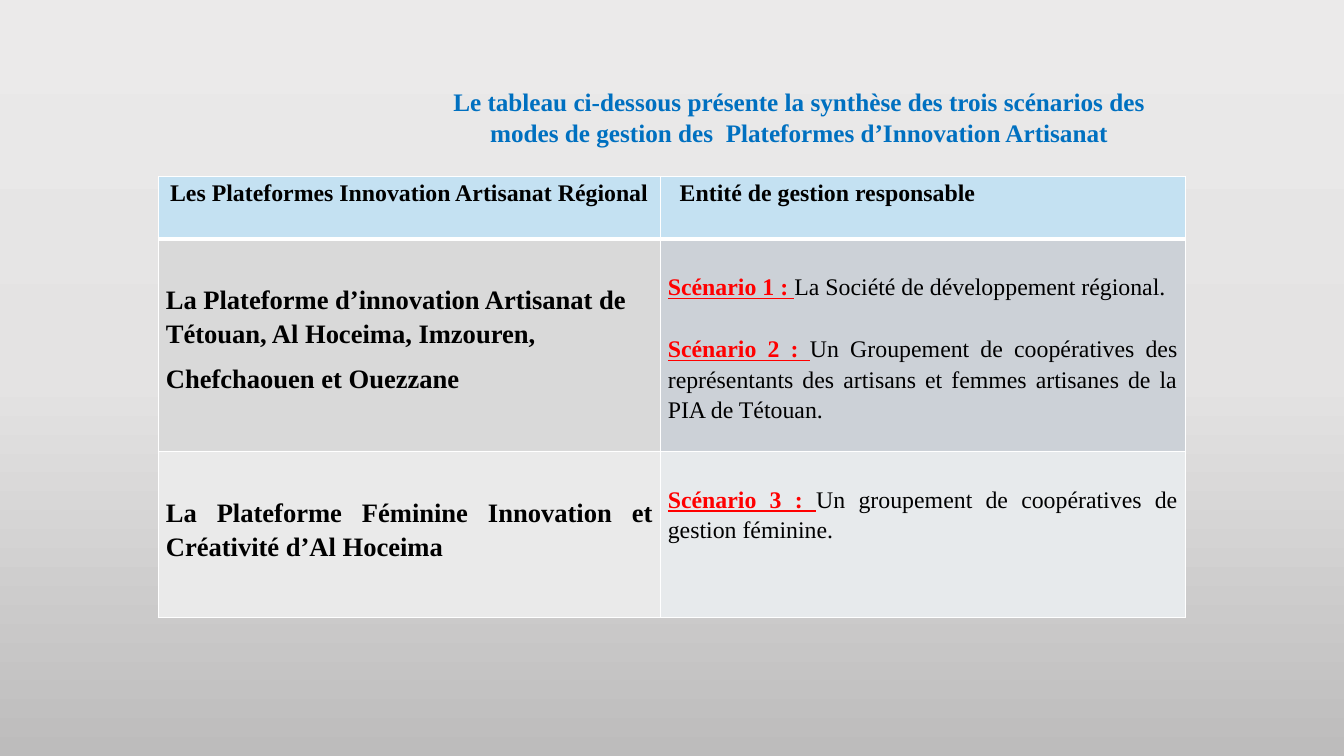
import copy
from dataclasses import dataclass

import pptx
import pptx.dml.color
import pptx.enum.dml
import pptx.enum.text
import pptx.oxml
import pptx.oxml.ns
import pptx.slide
import pptx.table
import pptx.text.text
import pptx.util

Cm = pptx.util.Cm
Pt = pptx.util.Pt
RGBColor = pptx.dml.color.RGBColor
Align = pptx.enum.text.PP_ALIGN

FONT = "Times New Roman"
BLACK = RGBColor(0x00, 0x00, 0x00)
RED = RGBColor(0xFF, 0x00, 0x00)
TITLE_BLUE = RGBColor(0x00, 0x70, 0xC0)
HEADER_BLUE = RGBColor(0xC4, 0xE1, 0xF2)
GREY = RGBColor(0xD9, 0xD9, 0xD9)
LIGHT_GREY = RGBColor(0xEA, 0xEA, 0xEA)
SLATE = RGBColor(0xCC, 0xD1, 0xD7)
LIGHT_SLATE = RGBColor(0xE7, 0xEA, 0xEC)
BACKDROP = (
    (0.0, RGBColor(0xEB, 0xEA, 0xEA)),
    (0.5, RGBColor(0xE4, 0xE3, 0xE3)),
    (1.0, RGBColor(0xBD, 0xBC, 0xBC)),
)

COLUMN_WIDTHS = (Cm(12.65), Cm(13.23))
ROW_HEIGHTS = (Cm(1.57), Cm(5.36), Cm(4.17))
SIDE_MARGIN = Cm(0.19)
PLATFORM_TOP = Cm(1.08)
SCENARIO_TOP = Cm(0.79)
THIN, THICK = Pt(1), Pt(3)


@dataclass
class Entry:
    text: str
    label: str = ""
    align: Align = Align.JUSTIFY
    size: int = 17
    bold: bool = False
    before: float = 0
    after: float = 0


@dataclass
class CellContent:
    fill: RGBColor
    entries: list[Entry]
    top: int = 0
    left: int = SIDE_MARGIN


def platform(text: str, align: Align = Align.LEFT) -> Entry:
    return Entry(text, align=align, size=19, bold=True, after=8)


ROWS = (
    (
        CellContent(HEADER_BLUE, [Entry("Les Plateformes Innovation Artisanat Régional",
                                        align=Align.CENTER, bold=True)]),
        CellContent(HEADER_BLUE, [Entry("Entité de gestion responsable", bold=True)],
                    left=Cm(0.49)),
    ),
    (
        CellContent(GREY, [
            platform("La Plateforme d’innovation Artisanat de Tétouan, Al Hoceima, Imzouren,"),
            platform("Chefchaouen et Ouezzane"),
        ], PLATFORM_TOP),
        CellContent(SLATE, [
            Entry("La Société de développement régional.", "Scénario 1 : "),
            Entry("Un Groupement de coopératives des représentants des artisans et "
                  "femmes artisanes de la PIA de Tétouan.", "Scénario 2 : ", before=22.5),
        ], SCENARIO_TOP),
    ),
    (
        CellContent(LIGHT_GREY, [
            platform("La Plateforme Féminine Innovation et Créativité d’Al Hoceima",
                     Align.JUSTIFY),
        ], PLATFORM_TOP),
        CellContent(LIGHT_SLATE, [
            Entry("Un groupement de coopératives de gestion féminine.", "Scénario 3 : "),
        ], SCENARIO_TOP),
    ),
)


def style_font(font: pptx.text.text.Font, size: int, color: RGBColor, bold: bool) -> None:
    font.name = FONT
    font.size = Pt(size)
    font.color.rgb = color
    font.bold = bold


def paint_background(page: pptx.slide.Slide) -> None:
    fill = page.background.fill
    fill.gradient()
    fill.gradient_angle = 270
    stop_list = page.element.xpath(".//a:gsLst")[0]
    stop_list.append(copy.deepcopy(stop_list[0]))
    for stop, (position, color) in zip(fill.gradient_stops, BACKDROP):
        stop.position = position
        stop.color.rgb = color


def add_title(page: pptx.slide.Slide) -> None:
    box = page.shapes.add_textbox(Cm(10.41), Cm(2.06), Cm(19.46), Cm(1.8))
    box.text_frame.word_wrap = True
    para = box.text_frame.paragraphs[0]
    para.text = ("Le tableau ci-dessous présente la synthèse des trois scénarios des "
                 "modes de gestion des  Plateformes d’Innovation Artisanat")
    para.alignment = Align.CENTER
    style_font(para.font, 18, TITLE_BLUE, True)


def write_entry(para: pptx.text.text._Paragraph, entry: Entry) -> None:
    para.alignment = entry.align
    para.line_spacing = 1.15
    if entry.before:
        para.space_before = Pt(entry.before)
    para.space_after = Pt(entry.after)
    style_font(para.font, entry.size, BLACK, entry.bold)
    if entry.label:
        label = para.add_run()
        label.text = entry.label
        label.font.bold = True
        label.font.underline = True
        label.font.color.rgb = RED
    para.add_run().text = entry.text


def add_borders(cell: pptx.table._Cell, top: int, bottom: int) -> None:
    """Give the cell white borders; call before filling, as fills follow lines."""
    properties = cell._tc.get_or_add_tcPr()
    for side, width in (("L", THIN), ("R", THIN), ("T", top), ("B", bottom)):
        properties.append(pptx.oxml.parse_xml(
            f'<a:ln{side} {pptx.oxml.ns.nsdecls("a")} w="{int(width)}">'
            f'<a:solidFill><a:srgbClr val="FFFFFF"/></a:solidFill></a:ln{side}>'))


def fill_cell(cell: pptx.table._Cell, content: CellContent) -> None:
    cell.fill.solid()
    cell.fill.fore_color.rgb = content.fill
    cell.margin_left, cell.margin_right = content.left, SIDE_MARGIN
    cell.margin_top, cell.margin_bottom = content.top, 0
    frame = cell.text_frame
    for index, entry in enumerate(content.entries):
        write_entry(frame.add_paragraph() if index else frame.paragraphs[0], entry)


def add_scenario_table(page: pptx.slide.Slide) -> None:
    table = page.shapes.add_table(
        len(ROWS), len(COLUMN_WIDTHS), Cm(3.99), Cm(4.45),
        sum(COLUMN_WIDTHS), sum(ROW_HEIGHTS)).table
    table.first_row = table.horz_banding = False
    for column, width in zip(table.columns, COLUMN_WIDTHS):
        column.width = width
    for row_index, contents in enumerate(ROWS):
        table.rows[row_index].height = ROW_HEIGHTS[row_index]
        for column_index, content in enumerate(contents):
            cell = table.cell(row_index, column_index)
            add_borders(cell,
                        top=THICK if row_index == 1 else THIN,
                        bottom=THICK if row_index == 0 else THIN)
            fill_cell(cell, content)


def main() -> None:
    deck = pptx.Presentation()
    deck.slide_width, deck.slide_height = Cm(33.87), Cm(19.05)
    page = deck.slides.add_slide(deck.slide_layouts[6])
    paint_background(page)
    add_scenario_table(page)
    add_title(page)
    deck.save("out.pptx")


if __name__ == "__main__":
    main()
